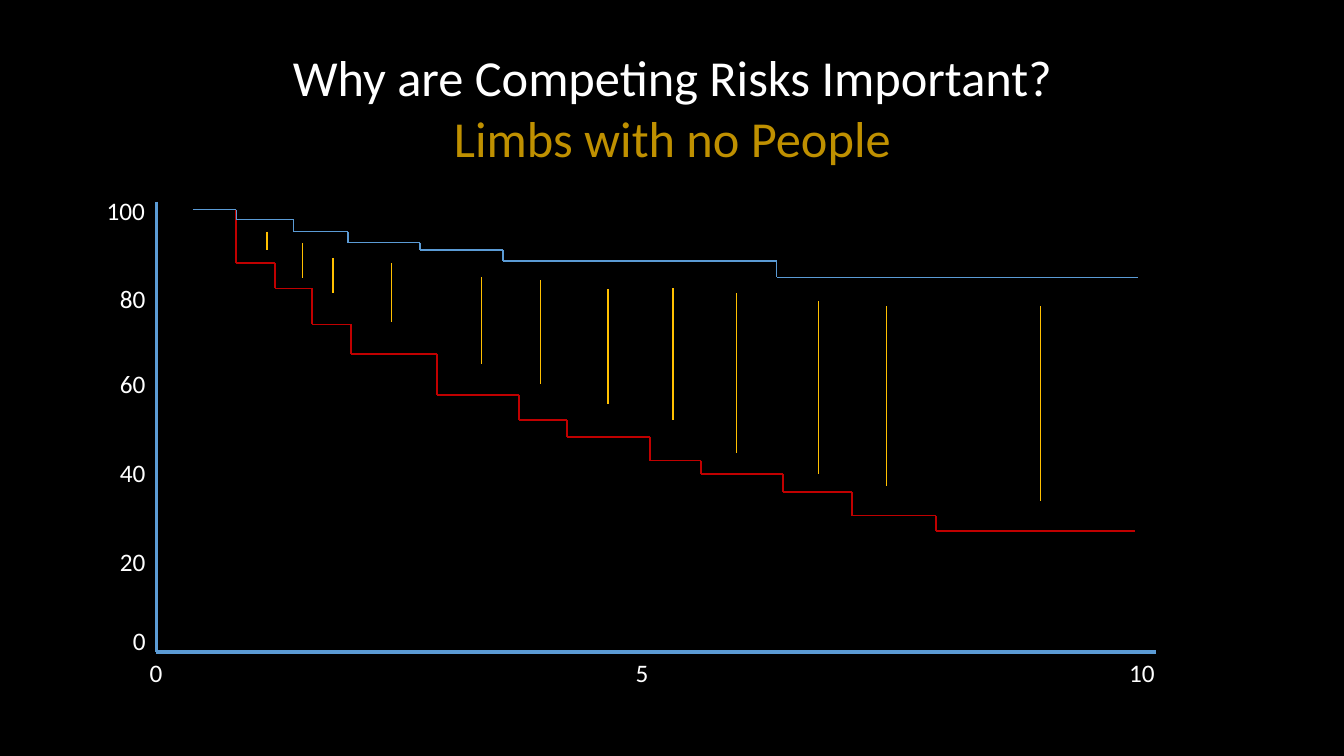
from itertools import pairwise

from lxml.etree import SubElement
from pptx import Presentation
from pptx.dml.color import RGBColor
from pptx.enum.shapes import MSO_CONNECTOR
from pptx.enum.text import MSO_AUTO_SIZE, PP_ALIGN
from pptx.oxml.ns import qn
from pptx.util import Inches, Pt

BLACK = RGBColor(0x00, 0x00, 0x00)
WHITE = RGBColor(0xFF, 0xFF, 0xFF)
GOLD = RGBColor(0xBF, 0x90, 0x00)
BLUE = RGBColor(0x5B, 0x9B, 0xD5)
RED = RGBColor(0xC0, 0x00, 0x00)
AMBER = RGBColor(0xFF, 0xC0, 0x00)
FONT = "Calibri"

# Plot grid: one column per year, one row per percent
ORIGIN_X, ORIGIN_Y = Inches(1.55), Inches(6.47)
YEAR, PERCENT = Inches(0.98), Inches(0.044)
LABEL_HEIGHT = Inches(0.4)

# Label text and the percent at which its middle stands
PERCENT_LABELS = [("100", 99.5), ("80", 79.8), ("60", 60.5),
                  ("40", 40.5), ("20", 20.5), ("0", 2.7)]
YEAR_LABELS = [("0", 0), ("5", 4.92), ("10", 9.98)]

# Each step: the year it starts and its level in percent
LIMB_STEPS = [(0.37, 99.8), (0.81, 97.5), (1.39, 94.8), (1.94, 92.3),
              (2.67, 90.7), (3.51, 88.2), (6.28, 84.5)]
LIMB_END = 9.94
PEOPLE_STEPS = [(0.37, 99.8), (0.81, 87.7), (1.2, 82), (1.58, 73.9),
                (1.97, 67.3), (2.84, 58), (3.67, 52.3), (4.16, 48.5),
                (5, 43.2), (5.51, 40.2), (6.34, 36.1), (7.04, 30.8),
                (7.89, 27.3)]
PEOPLE_END = 9.91

# Gap between the curves: year, upper and lower percent
GAPS = [(1.12, 94.8, 90.7), (1.48, 92.3, 84.3), (1.79, 88.9, 80.9),
        (2.38, 87.7, 74.5), (3.29, 84.5, 65), (3.89, 83.9, 60.5),
        (4.57, 81.8, 55.9), (5.23, 82, 52.3), (5.87, 80.9, 45),
        (6.7, 79.1, 40.2), (7.39, 78, 37.5), (8.95, 78, 34.1)]


def plot_x(year):
    return round(ORIGIN_X + year * YEAR)


def plot_y(percent):
    return round(ORIGIN_Y - percent * PERCENT)


def add_line(slide, start, end, color, width):
    """Draw a straight line between two (year, percent) points."""
    line = slide.shapes.add_connector(
        MSO_CONNECTOR.STRAIGHT, plot_x(start[0]), plot_y(start[1]),
        plot_x(end[0]), plot_y(end[1]))
    line.line.color.rgb = color
    line.line.width = Pt(width)
    SubElement(line._element.spPr, qn("a:effectLst"))


def add_step_curve(slide, steps, end_year, color, width):
    """Draw a level line for each step and a drop to the next one."""
    corners = steps + [(end_year, steps[-1][1])]
    for (year, level), (next_year, next_level) in pairwise(corners):
        add_line(slide, (year, level), (next_year, level), color, width)
        if next_level != level:
            add_line(slide, (next_year, level), (next_year, next_level), color, width)


def add_text(slide, box, lines, size, alignment, wrap):
    """Add a text box with one paragraph per (text, color) pair."""
    text_frame = slide.shapes.add_textbox(*box).text_frame
    text_frame.word_wrap = wrap
    text_frame.auto_size = MSO_AUTO_SIZE.SHAPE_TO_FIT_TEXT
    text_frame.text = "\n".join(text for text, _ in lines)
    for paragraph, (_, color) in zip(text_frame.paragraphs, lines):
        paragraph.alignment = alignment
        for run in paragraph.runs:
            run.font.name = FONT
            run.font.size = Pt(size)
            run.font.color.rgb = color


def add_label(slide, text, left, top, width):
    add_text(slide, (left, top, width, LABEL_HEIGHT), [(text, WHITE)],
             18, PP_ALIGN.LEFT, False)


def label_width(text):
    return Inches(0.2 + 0.13 * len(text))


def add_axes(slide):
    add_line(slide, (0, 101.6), (0, 0), BLUE, 2.5)
    add_line(slide, (10.12, 0), (0, 0), BLUE, 2.5)
    for text, percent in PERCENT_LABELS:
        width = label_width(text)
        add_label(slide, text, ORIGIN_X - width,
                  plot_y(percent) - LABEL_HEIGHT // 2, width)
    for text, year in YEAR_LABELS:
        width = label_width(text)
        add_label(slide, text, plot_x(year) - width // 2, ORIGIN_Y, width)


def main():
    presentation = Presentation()
    presentation.slide_width = Inches(13.33)
    presentation.slide_height = Inches(7.5)
    slide = presentation.slides.add_slide(presentation.slide_layouts[6])
    slide.background.fill.solid()
    slide.background.fill.fore_color.rgb = BLACK

    # Title
    title_box = (Inches(2.36), Inches(0.41), Inches(8.62), Inches(1.31))
    add_text(slide, title_box,
             [("Why are Competing Risks Important?", WHITE),
              ("Limbs with no People", GOLD)], 36, PP_ALIGN.CENTER, True)

    # Axes, curves and the gaps between them
    add_axes(slide)
    add_step_curve(slide, PEOPLE_STEPS, PEOPLE_END, RED, 1.25)
    add_step_curve(slide, LIMB_STEPS, LIMB_END, BLUE, 1)
    for year, upper, lower in GAPS:
        add_line(slide, (year, upper), (year, lower), AMBER, 1)

    presentation.save("out.pptx")


if __name__ == "__main__":
    main()
